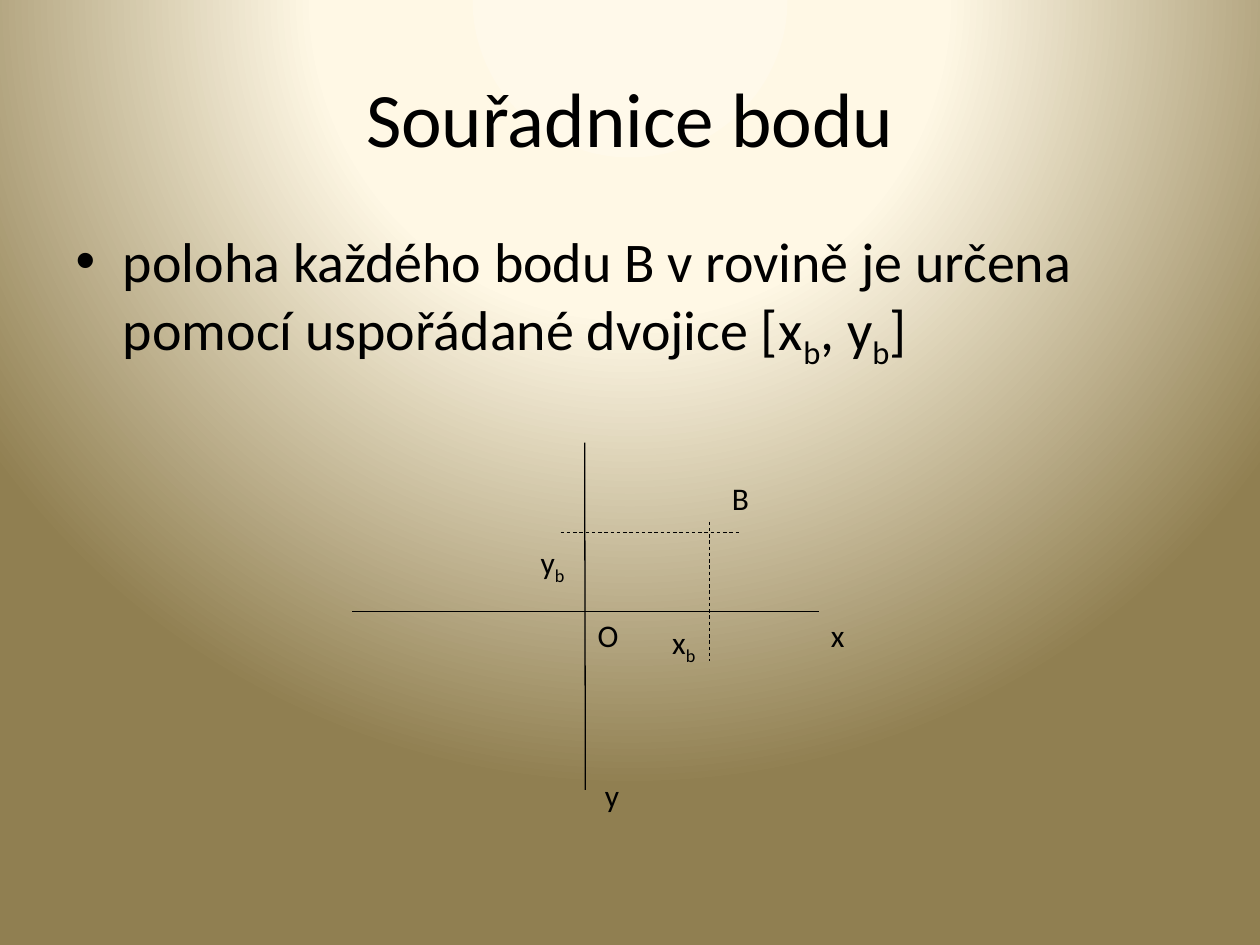
from typing import NamedTuple

from lxml import etree
from pptx import Presentation
from pptx.dml.color import RGBColor
from pptx.enum import dml, shapes, text
from pptx.oxml import ns
from pptx.util import Pt

FONT = "Calibri"
BLACK = "000000"


class Line(NamedTuple):
    x1: float
    y1: float
    x2: float
    y2: float
    weight: float = 0.75
    dashed: bool = False


class Label(NamedTuple):
    content: str
    left: float
    top: float
    width: float


LINES = [
    Line(201.4, 349.4, 468, 349.4),
    Line(334.1, 253, 334.5, 451.4),
    Line(405.4, 298.1, 405.4, 377.7, 0.5, True),
    Line(320.4, 304.2, 422.6, 304.2, 0.5, True),
]

LABELS = [
    Label("x_b", 377, 352.3, 33.8),
    Label("y_b", 301.9, 306.7, 36.7),
    Label("B", 411.1, 270, 28.1),
    Label("x", 467.7, 348.5, 17.3),
    Label("y", 338.6, 439.9, 26.6),
    Label("O", 334.5, 348.5, 26.6),
]

GRADIENT = [(0, "FFF9EA"), (40, "FFF8E5"), (100, "907F51")]


def rgb(color: str) -> RGBColor:
    return RGBColor.from_string(color)


def place(shape, left: float, top: float, width: float, height: float) -> None:
    shape.left, shape.top = Pt(left), Pt(top)
    shape.width, shape.height = Pt(width), Pt(height)


def write(paragraph, content: str, size: float) -> None:
    for index, part in enumerate(content.split("_")):
        if index:
            subscript = paragraph.add_run()
            subscript.text = part[0]
            subscript.font._element.set("baseline", "-25000")
            part = part[1:]
        if part:
            paragraph.add_run().text = part
    paragraph.font.name = FONT
    paragraph.font.size = Pt(size)
    paragraph.font.color.rgb = rgb(BLACK)


def paint_background(slide) -> None:
    slide.background.fill.gradient()
    gradient = slide._element.find(".//" + ns.qn("a:gradFill"))
    for child in list(gradient):
        gradient.remove(child)
    stops = etree.SubElement(gradient, ns.qn("a:gsLst"))
    for position, color in GRADIENT:
        stop = etree.SubElement(stops, ns.qn("a:gs"), pos=str(position * 1000))
        etree.SubElement(stop, ns.qn("a:srgbClr"), val=color)
    circle = etree.SubElement(gradient, ns.qn("a:path"), path="circle")
    etree.SubElement(circle, ns.qn("a:fillToRect"),
                     l="50000", t="-80000", r="50000", b="180000")


def draw_line(slide, line: Line) -> None:
    connector = slide.shapes.add_connector(
        shapes.MSO_CONNECTOR.STRAIGHT,
        Pt(line.x1), Pt(line.y1), Pt(line.x2), Pt(line.y2))
    connector.line.color.rgb = rgb(BLACK)
    connector.line.width = Pt(line.weight)
    if line.dashed:
        connector.line.dash_style = dml.MSO_LINE.DASH
    etree.SubElement(connector._element.spPr, ns.qn("a:effectLst"))


def draw_label(slide, label: Label) -> None:
    box = slide.shapes.add_textbox(
        Pt(label.left), Pt(label.top), Pt(label.width), Pt(28.8))
    box.text_frame.word_wrap = True
    write(box.text_frame.paragraphs[0], label.content, 18)


def main() -> None:
    presentation = Presentation()
    presentation.slide_width, presentation.slide_height = Pt(720), Pt(540)
    slide = presentation.slides.add_slide(presentation.slide_layouts[1])
    paint_background(slide)

    title = slide.shapes.title
    place(title, 36, 21.6, 648, 90)
    title.text_frame.vertical_anchor = text.MSO_ANCHOR.MIDDLE
    heading = title.text_frame.paragraphs[0]
    heading.alignment = text.PP_ALIGN.CENTER
    write(heading, "Souřadnice bodu", 44)

    body = slide.placeholders[1]
    place(body, 36, 126, 596.2, 126.7)
    write(body.text_frame.paragraphs[0],
          "poloha každého bodu B v rovině je určena "
          "pomocí uspořádané dvojice [x_b, y_b]", 32)

    for line in LINES:
        draw_line(slide, line)
    for label in LABELS:
        draw_label(slide, label)

    presentation.save("out.pptx")


if __name__ == "__main__":
    main()
